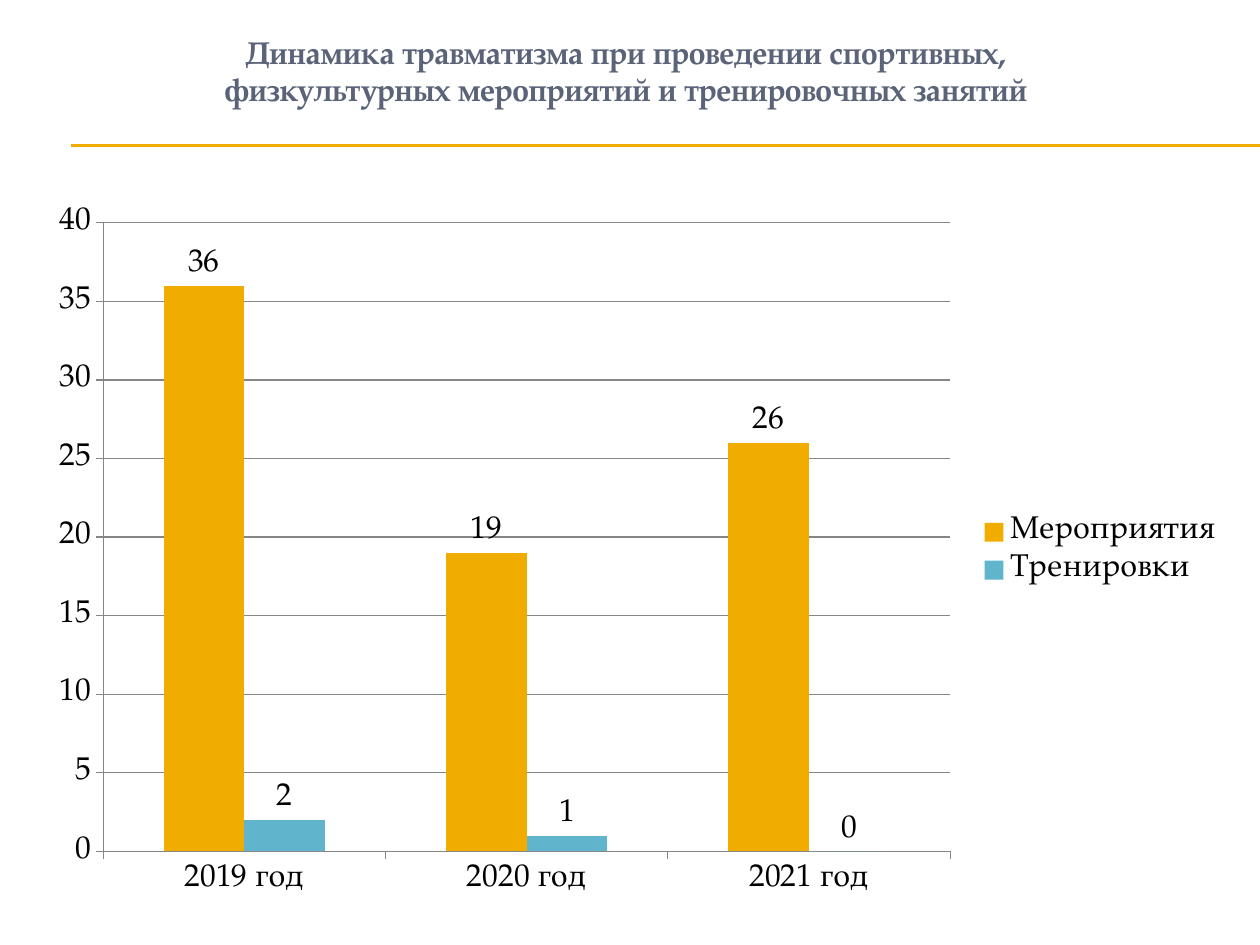
from lxml.etree import SubElement
from pptx import Presentation
from pptx.chart.data import CategoryChartData
from pptx.dml.color import RGBColor
from pptx.enum.chart import XL_CHART_TYPE, XL_LABEL_POSITION, XL_LEGEND_POSITION, XL_TICK_MARK
from pptx.enum.text import MSO_AUTO_SIZE, PP_ALIGN
from pptx.enum.shapes import MSO_CONNECTOR
from pptx.oxml.ns import qn
from pptx.util import Inches, Pt

FONT = "TeX Gyre Pagella"
TEXT_SIZE = Pt(18)
COLORS = {
    "title": "5A6378",
    "rule": "F0AD00",
    "text": "000000",
    "axis": "868686",
}
TITLE_LINES = [
    "Динамика травматизма при проведении спортивных, ",
    "физкультурных мероприятий и тренировочных занятий ",
]
YEARS = ["2019 год", "2020 год", "2021 год"]
INJURIES = {
    "Мероприятия": ((36, 19, 26), "F0AD00"),
    "Тренировки": ((2, 1, 0), "60B5CC"),
}


def color(name):
    """Return the named palette colour."""
    return RGBColor.from_string(COLORS[name])


def style_font(font, color_name, bold=False):
    """Apply the common typeface and size with the given colour."""
    font.name = FONT
    font.size = TEXT_SIZE
    font.bold = bold
    font.color.rgb = color(color_name)


def add_rule(slide, left, right, top):
    """Draw a thin horizontal rule."""
    rule = slide.shapes.add_connector(
        MSO_CONNECTOR.STRAIGHT, Inches(left), Inches(top), Inches(right), Inches(top)
    )
    rule.line.color.rgb = color("rule")
    rule.line.width = Pt(0.75)
    SubElement(rule._element.spPr, qn("a:effectLst"))


def add_title(slide, width):
    """Add the centred two-line title across the slide."""
    box = slide.shapes.add_textbox(0, Inches(0.21), width, Inches(0.71))
    text_frame = box.text_frame
    text_frame.word_wrap = True
    text_frame.auto_size = MSO_AUTO_SIZE.SHAPE_TO_FIT_TEXT
    text_frame.text = "\n".join(TITLE_LINES)
    for paragraph in text_frame.paragraphs:
        paragraph.alignment = PP_ALIGN.CENTER
        for run in paragraph.runs:
            style_font(run.font, "title", bold=True)


def style_axis(axis):
    """Give an axis outward ticks and a grey line."""
    axis.major_tick_mark = XL_TICK_MARK.OUTSIDE
    axis.minor_tick_mark = XL_TICK_MARK.NONE
    axis.format.line.color.rgb = color("axis")
    axis.format.line.width = Pt(0.75)


def style_series(series):
    """Fill the series with its colour and show its values."""
    series.format.fill.solid()
    series.format.fill.fore_color.rgb = RGBColor.from_string(INJURIES[series.name][1])
    series.invert_if_negative = False
    labels = series.data_labels
    labels.show_value = True
    labels.position = XL_LABEL_POSITION.OUTSIDE_END
    style_font(labels.font, "text")


def add_injury_chart(slide):
    """Add the clustered columns of injuries by year."""
    chart_data = CategoryChartData()
    chart_data.categories = YEARS
    for name, (values, _) in INJURIES.items():
        chart_data.add_series(name, values)
    chart = slide.shapes.add_chart(
        XL_CHART_TYPE.COLUMN_CLUSTERED,
        Inches(0.28), Inches(1.53), Inches(9.53), Inches(5.69), chart_data,
    ).chart
    style_font(chart.font, "text")
    chart.has_title = False
    chart.has_legend = True
    chart.legend.position = XL_LEGEND_POSITION.RIGHT
    chart.legend.include_in_layout = False
    style_axis(chart.category_axis)
    style_axis(chart.value_axis)
    chart.value_axis.minimum_scale = 0
    chart.value_axis.maximum_scale = 40
    chart.value_axis.major_unit = 5
    gridlines = chart.value_axis.major_gridlines.format.line
    gridlines.color.rgb = color("axis")
    gridlines.width = Pt(0.75)
    plot = chart.plots[0]
    plot.vary_by_categories = False
    plot.gap_width = 150
    plot.overlap = 0
    for series in plot.series:
        style_series(series)


def main():
    """Build the slide and save it."""
    presentation = Presentation()
    presentation.slide_width = Inches(10)
    presentation.slide_height = Inches(7.5)
    slide = presentation.slides.add_slide(presentation.slide_layouts[6])
    for top in (1.15, 1.16):
        add_rule(slide, 0.56, 10, top)
    add_title(slide, presentation.slide_width)
    add_injury_chart(slide)
    presentation.save("out.pptx")


if __name__ == "__main__":
    main()
